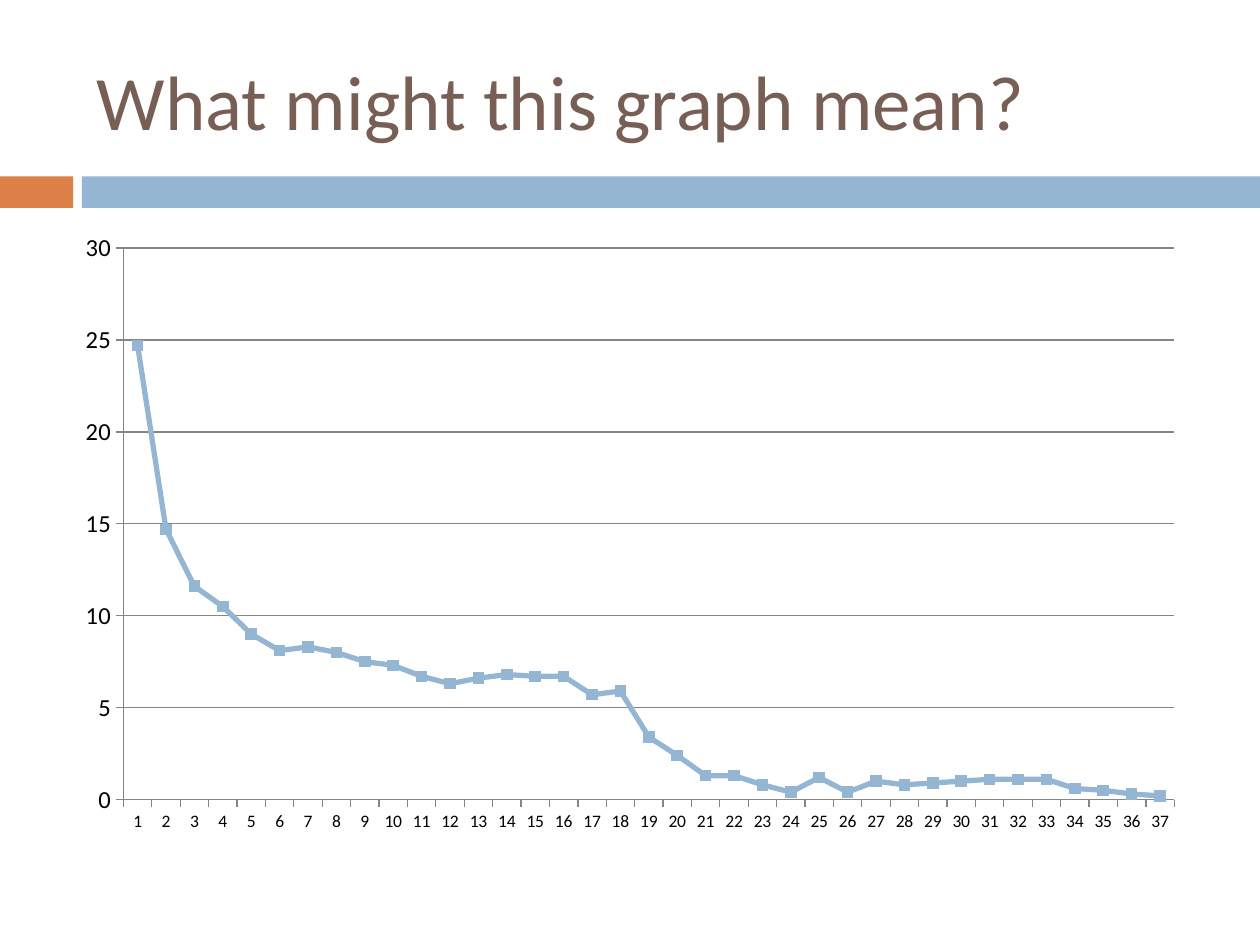
import pptx
import pptx.chart.data
import pptx.dml.color
import pptx.enum.chart
import pptx.enum.shapes
import pptx.enum.text
import pptx.util
from pptx.util import Inches

FONT = "Calibri"
COLORS = {
    "orange": "DD8047",
    "blue": "94B6D2",
    "brown": "775F55",
    "text": "000000",
    "axis": "868686",
}
VALUES = [
    24.7, 14.7, 11.6, 10.5, 9, 8.1, 8.3, 8, 7.5, 7.3,
    6.7, 6.3, 6.6, 6.8, 6.7, 6.7, 5.7, 5.9, 3.4, 2.4,
    1.3, 1.3, 0.8, 0.4, 1.2, 0.4, 1, 0.8, 0.9, 1,
    1.1, 1.1, 1.1, 0.6, 0.5, 0.3, 0.2,
]


def rgb(name):
    return pptx.dml.color.RGBColor.from_string(COLORS[name])


def style_font(font, size, color):
    font.name = FONT
    font.size = pptx.util.Pt(size)
    font.color.rgb = rgb(color)


def style_line(line, color, width):
    line.color.rgb = rgb(color)
    line.width = pptx.util.Pt(width)


def add_bar(slide, left, width, color):
    """Add one piece of the band below the title."""
    bar = slide.shapes.add_shape(
        pptx.enum.shapes.MSO_SHAPE.RECTANGLE,
        Inches(left), Inches(1.4), Inches(width), Inches(0.25),
    )
    bar.shadow.inherit = False
    bar.fill.solid()
    bar.fill.fore_color.rgb = rgb(color)
    bar.line.fill.background()


def add_title(slide, text):
    title = slide.shapes.add_textbox(
        Inches(0.67), Inches(0.25), Inches(8.92), Inches(1.08)
    )
    frame = title.text_frame
    frame.word_wrap = True
    frame.vertical_anchor = pptx.enum.text.MSO_ANCHOR.MIDDLE
    paragraph = frame.paragraphs[0]
    paragraph.text = text
    style_font(paragraph.font, 44, "brown")


def style_axis(axis, size):
    axis.major_tick_mark = pptx.enum.chart.XL_TICK_MARK.OUTSIDE
    axis.minor_tick_mark = pptx.enum.chart.XL_TICK_MARK.NONE
    style_font(axis.tick_labels.font, size, "text")
    style_line(axis.format.line, "axis", 0.75)


def add_line_chart(slide, values):
    data = pptx.chart.data.CategoryChartData()
    data.categories = [str(number) for number in range(1, len(values) + 1)]
    data.add_series("Series 1", values)
    chart = slide.shapes.add_chart(
        pptx.enum.chart.XL_CHART_TYPE.LINE_MARKERS,
        Inches(0.5), Inches(1.75), Inches(9), Inches(4.95), data,
    ).chart
    chart.has_title = False
    chart.has_legend = False
    style_font(chart.font, 10, "text")

    style_axis(chart.category_axis, 10)
    value_axis = chart.value_axis
    style_axis(value_axis, 14)
    value_axis.minimum_scale = 0
    value_axis.maximum_scale = 30
    value_axis.major_unit = 5
    value_axis.has_major_gridlines = True
    style_line(value_axis.major_gridlines.format.line, "axis", 0.75)

    plot = chart.plots[0]
    plot.vary_by_categories = False
    series = plot.series[0]
    series.smooth = False
    style_line(series.format.line, "blue", 3)
    marker = series.marker
    marker.style = pptx.enum.chart.XL_MARKER_STYLE.SQUARE
    marker.size = 6
    marker.format.fill.solid()
    marker.format.fill.fore_color.rgb = rgb("blue")
    marker.format.line.color.rgb = rgb("blue")


def main():
    presentation = pptx.Presentation()
    presentation.slide_width = Inches(10)
    presentation.slide_height = Inches(7.5)
    slide = presentation.slides.add_slide(presentation.slide_layouts[6])
    add_bar(slide, 0, 0.58, "orange")
    add_bar(slide, 0.65, 9.35, "blue")
    add_title(slide, "What might this graph mean?")
    add_line_chart(slide, VALUES)
    presentation.save("out.pptx")


if __name__ == "__main__":
    main()
